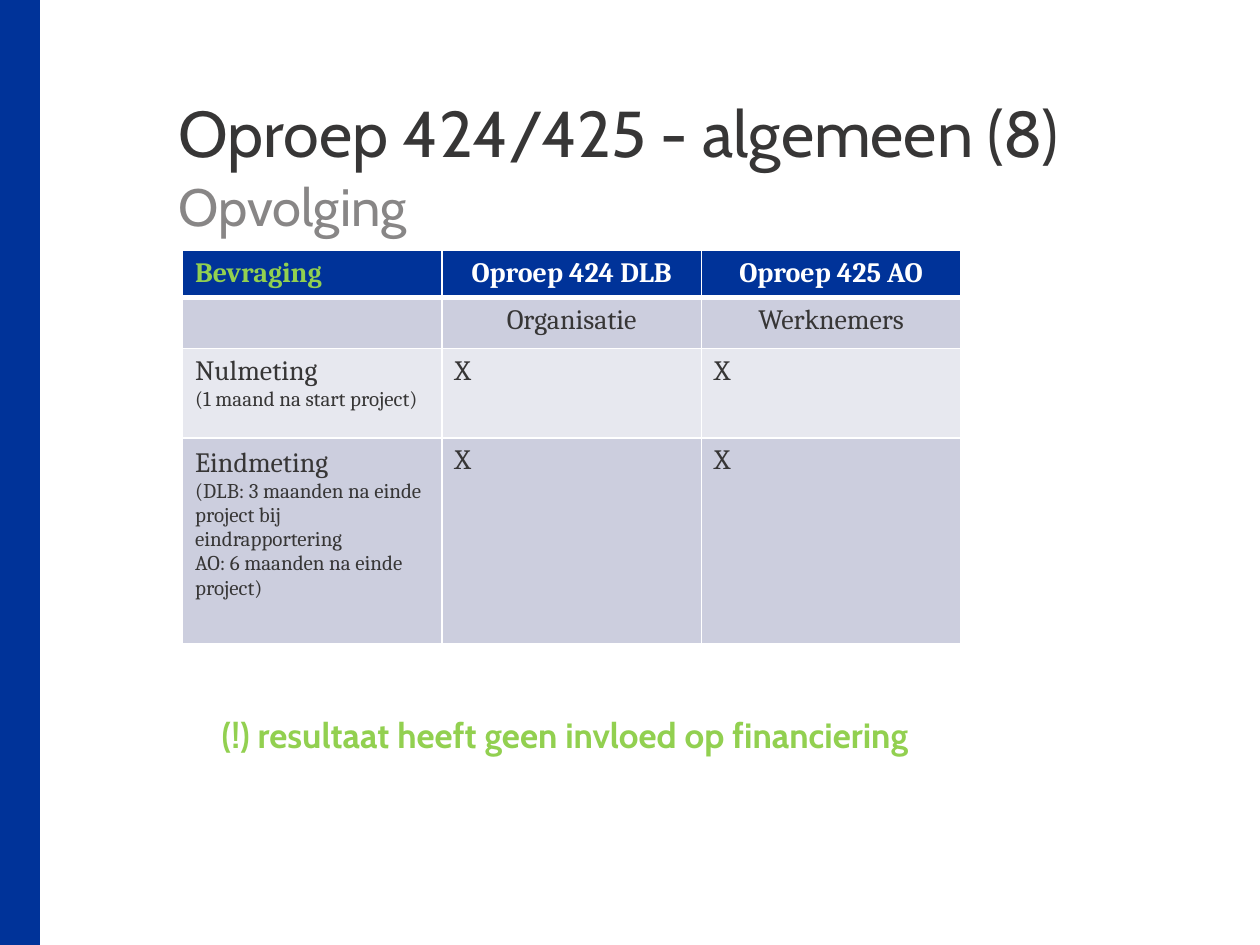
import pptx
import pptx.util
import pptx.dml.color
import pptx.enum.shapes
import pptx.enum.text
import pptx.oxml
from pptx.oxml.ns import nsdecls
from pptx.util import Cm, Pt

# Content
TITLE = "Oproep 424/425 - algemeen (8)"
SUBTITLE = "Opvolging"
SURVEY = [
    ["Bevraging", "Oproep 424 DLB", "Oproep 425 AO"],
    ["", "Organisatie", "Werknemers"],
    ["Nulmeting\n(1 maand na start project)", "X", "X"],
    ["Eindmeting\n(DLB: 3 maanden na einde project bij eindrapportering\n"
     "AO: 6 maanden na einde project)", "X", "X"],
]
REMARK = "(!) resultaat heeft geen invloed op financiering"

# Look
BLUE, GREEN, WHITE = "003399", "92D050", "FFFFFF"
DARK, GREY = "373636", "888686"
ROW_FILLS = [BLUE, "CCCEDE", "E7E8EF", "CCCEDE"]
ROW_HEIGHTS = [0.95, 0.98, 1.8, 4.15]
COLUMN_WIDTH = 5.23


def color(hex_code):
    return pptx.dml.color.RGBColor.from_string(hex_code)


def style(run, size, hex_code, font="Cabin", bold=False):
    run.font.size = Pt(size)
    run.font.name = font
    run.font.bold = bold
    run.font.color.rgb = color(hex_code)


def clear_margins(frame):
    frame.margin_left = frame.margin_right = Cm(0)
    frame.margin_top = frame.margin_bottom = Cm(0)
    frame.word_wrap = True
    frame.vertical_anchor = pptx.enum.text.MSO_ANCHOR.TOP


def border(cell, widths):
    properties = cell._tc.get_or_add_tcPr()
    for position, (side, width) in enumerate(widths.items()):
        properties.insert(position, pptx.oxml.parse_xml(
            f'<a:{side} {nsdecls("a")} w="{Pt(width)}"><a:solidFill>'
            f'<a:srgbClr val="{WHITE}"/></a:solidFill></a:{side}>'))


presentation = pptx.Presentation()
presentation.slide_width, presentation.slide_height = Cm(25.4), Cm(19.05)
slide = presentation.slides.add_slide(presentation.slide_layouts[5])

# Side bar
bar = slide.shapes.add_shape(pptx.enum.shapes.MSO_SHAPE.RECTANGLE,
                             Cm(0), Cm(0), Cm(0.79), Cm(19.05))
bar.shadow.inherit = False
bar.fill.solid()
bar.fill.fore_color.rgb = bar.line.color.rgb = color(BLUE)
bar.line.width = Pt(1)

# Title and subtitle
title = slide.shapes.title
title.left, title.top, title.width, title.height = Cm(3.6), Cm(2.1), Cm(20.6), Cm(3.1)
clear_margins(title.text_frame)
title.text_frame.auto_size = pptx.enum.text.MSO_AUTO_SIZE.NONE
heading = title.text_frame.paragraphs[0]
heading.text = f"{TITLE}\v{SUBTITLE}"
heading.alignment = pptx.enum.text.PP_ALIGN.LEFT
heading.line_spacing = Pt(38)
for run, (size, shade) in zip(heading.runs, [(37, DARK), (30, GREY)]):
    style(run, size, shade)

# Survey table
table = slide.shapes.add_table(
    len(SURVEY), len(SURVEY[0]), Cm(3.68), Cm(5.05),
    Cm(COLUMN_WIDTH * len(SURVEY[0])), Cm(sum(ROW_HEIGHTS))).table
for column in table.columns:
    column.width = Cm(COLUMN_WIDTH)
for r, texts in enumerate(SURVEY):
    table.rows[r].height = Cm(ROW_HEIGHTS[r])
    for c, text in enumerate(texts):
        cell = table.cell(r, c)
        cell.fill.solid()
        cell.fill.fore_color.rgb = color(ROW_FILLS[r])
        border(cell, {"lnL": 1, "lnR": 1, "lnT": 3 if r == 1 else 1,
                      "lnB": 3 if r == 0 else 1})
        cell.text_frame.text = text
        if r == 3 and c == 0:
            cell.margin_top = Cm(0.19)
        ink = DARK if r else (WHITE if c else GREEN)
        for line, paragraph in enumerate(cell.text_frame.paragraphs):
            if r < 2 and c:
                paragraph.alignment = pptx.enum.text.PP_ALIGN.CENTER
            for run in paragraph.runs:
                style(run, 12 if line else 16, ink, "Cambria", r == 0)

# Remark
remark = slide.shapes.add_textbox(Cm(3.68), Cm(14.48), Cm(18.24), Cm(1.27)).text_frame
clear_margins(remark)
remark.margin_left = Cm(0.79)
remark.text = REMARK
remark.paragraphs[0].line_spacing = 0.9
style(remark.paragraphs[0].runs[0], 20, GREEN, bold=True)

presentation.save("out.pptx")
